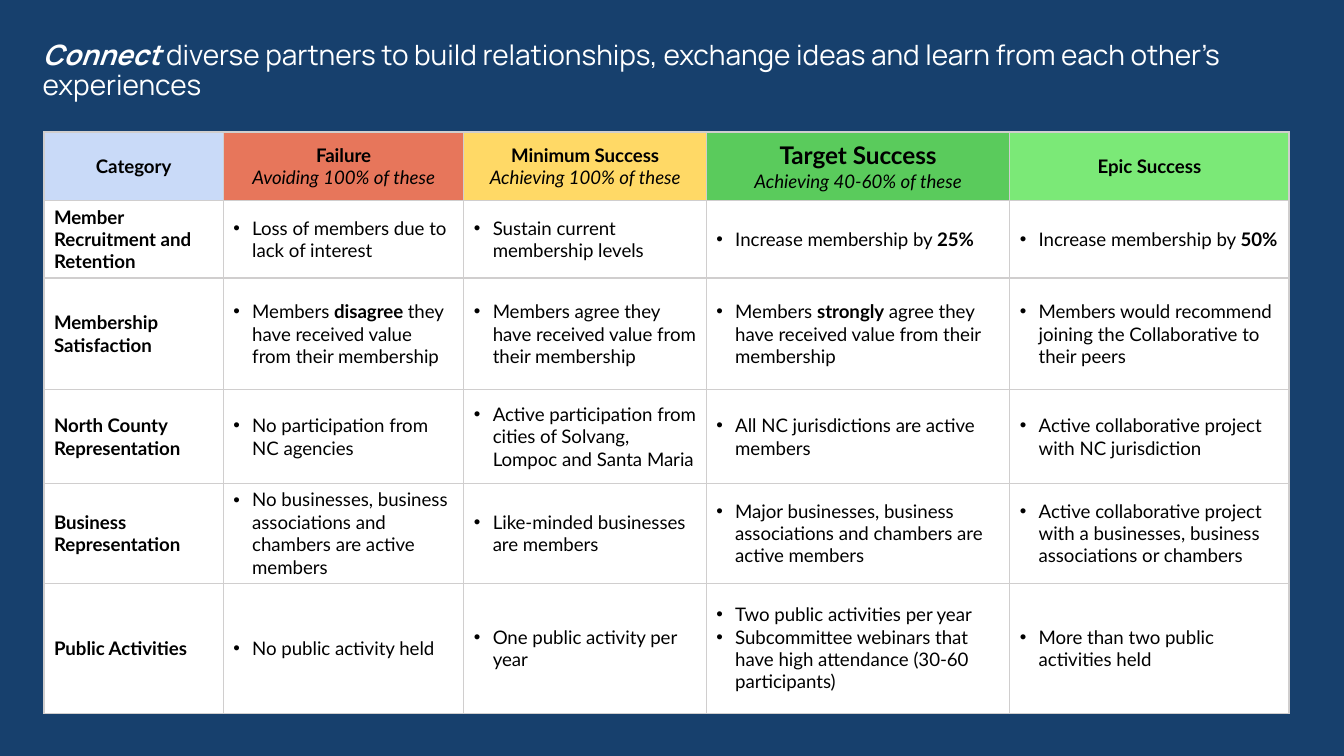
from lxml.etree import SubElement
from pptx import Presentation
from pptx.dml.color import RGBColor
from pptx.enum.text import MSO_ANCHOR, PP_ALIGN
from pptx.oxml.ns import qn
from pptx.util import Emu, Inches, Pt

THEME = {
    "back": "17406D", "light": "FFFFFF", "ink": "000000", "rule": "D0CECE",
    "heads": ["C9DAF8", "E7765B", "FFD966", "5ACB5C", "7BE977"],
    "body": {"name": "Lato", "size": Pt(10)},
    "big": {"name": "Lato", "size": Pt(13)},
    "title": {"name": "Manrope", "size": Pt(15)},
}
WIDE = Inches(10)
HIGH = Emu(WIDE * 9 // 16)
COLS = [13.35, 17.9, 18.04, 22.58, 20.77]
ROWS = [9.1, 10, 14.8, 12.4, 12.8, 17.2]
PAD = {"margin_left": Pt(5.4), "margin_right": Pt(5.4),
       "margin_top": Pt(2.7), "margin_bottom": Pt(2.7)}
CELL = {**PAD, "vertical_anchor": MSO_ANCHOR.MIDDLE}
FRAME = {**PAD, "vertical_anchor": MSO_ANCHOR.TOP, "word_wrap": True}

HEADS = [
    ["Category"],
    ["Failure", "Avoiding 100% of these"],
    ["Minimum Success", "Achieving 100% of these"],
    ["Target Success", "Achieving 40-60% of these"],
    ["Epic Success"],
]
GOALS = [
    ["Member Recruitment and Retention",
     ["Loss of members due to lack of interest"],
     ["Sustain current membership levels"],
     ["Increase membership by *25%* "],
     ["Increase membership by *50%*"]],
    ["Membership Satisfaction",
     ["Members *disagree *they have received value from their membership"],
     ["Members agree they have received value from their membership"],
     ["Members *strongly* agree they have received value from their membership"],
     ["Members would recommend joining the Collaborative to their peers"]],
    ["North County Representation",
     ["No participation from NC agencies"],
     ["Active participation from cities of Solvang, Lompoc and Santa Maria"],
     ["All NC jurisdictions are active members"],
     ["Active collaborative project with NC jurisdiction"]],
    ["Business Representation",
     ["No businesses, business associations and chambers are active members"],
     ["Like-minded businesses are members"],
     ["Major businesses, business associations and chambers are active members"],
     ["Active collaborative project with a businesses, business associations or chambers"]],
    ["Public Activities",
     ["No public activity held"],
     ["One public activity per year"],
     ["Two public activities per year",
      "Subcommittee webinars that have high attendance (30-60 participants)"],
     ["More than two public activities held"]],
]


def across(share):
    return Emu(round(WIDE * share / 100))


def down(share):
    return Emu(round(HIGH * share / 100))


def apply(target, values):
    for name, value in values.items():
        setattr(target, name, value)


def add_run(para, text, style, color="ink", **extra):
    run = para.add_run()
    run.text = text
    apply(run.font, {**THEME[style], "bold": False, "italic": False, **extra})
    run.font.color.rgb = RGBColor.from_string(THEME[color])


def add_paras(frame, count):
    return [frame.paragraphs[0]] + [frame.add_paragraph() for _ in range(count - 1)]


def add_bullet(para):
    props = para._p.get_or_add_pPr()
    props.set("marL", str(Inches(0.14)))
    props.set("indent", str(-Inches(0.14)))
    color = SubElement(props, qn("a:buClr"))
    SubElement(color, qn("a:srgbClr"), val=THEME["ink"])
    SubElement(props, qn("a:buFont"), typeface="Arial")
    SubElement(props, qn("a:buChar"), char="•")


def style_cell(cell, color):
    apply(cell, CELL)
    props = cell._tc.get_or_add_tcPr()
    for side in ("lnL", "lnR", "lnT", "lnB"):
        line = SubElement(props, qn("a:" + side), w=str(Pt(0.75)))
        fill = SubElement(line, qn("a:solidFill"))
        SubElement(fill, qn("a:srgbClr"), val=THEME["rule"])
    cell.fill.solid()
    cell.fill.fore_color.rgb = RGBColor.from_string(color)


def fill_head(cell, lines, color):
    style_cell(cell, color)
    for spot, para in enumerate(add_paras(cell.text_frame, len(lines))):
        para.alignment = PP_ALIGN.CENTER
        style = "big" if lines[spot] == "Target Success" else "body"
        add_run(para, lines[spot], style, bold=spot == 0, italic=spot > 0)


def fill_name(cell, text):
    style_cell(cell, THEME["light"])
    add_run(cell.text_frame.paragraphs[0], text, "body", bold=True)


def fill_goal(cell, items):
    style_cell(cell, THEME["light"])
    for para, item in zip(add_paras(cell.text_frame, len(items)), items):
        add_bullet(para)
        for spot, part in enumerate(item.split("*")):
            if part:
                add_run(para, part, "body", bold=spot % 2 == 1)


def add_grid(slide):
    table = slide.shapes.add_table(
        len(ROWS), len(COLS), across(3.27), down(17.45),
        across(sum(COLS)), down(sum(ROWS))).table
    apply(table, {"first_row": False, "horz_banding": False})
    for col, share in zip(table.columns, COLS):
        col.width = across(share)
    for row, share in zip(table.rows, ROWS):
        row.height = down(share)
    for col, (lines, color) in enumerate(zip(HEADS, THEME["heads"])):
        fill_head(table.cell(0, col), lines, color)
    for row, (name, *goals) in enumerate(GOALS, 1):
        fill_name(table.cell(row, 0), name)
        for col, items in enumerate(goals, 1):
            fill_goal(table.cell(row, col), items)


def add_title(slide):
    box = slide.shapes.add_textbox(across(2.43), down(4.85), across(96.4), down(14.8))
    apply(box.text_frame, FRAME)
    para = box.text_frame.paragraphs[0]
    para.line_spacing = 0.89
    add_run(para, "Connect ", "title", "light", bold=True, italic=True)
    add_run(para, "diverse partners to build relationships, exchange ideas "
            "and learn from each other’s experiences", "title", "light")


def main():
    deck = Presentation()
    apply(deck, {"slide_width": WIDE, "slide_height": HIGH})
    slide = deck.slides.add_slide(deck.slide_layouts[6])
    slide.background.fill.solid()
    slide.background.fill.fore_color.rgb = RGBColor.from_string(THEME["back"])
    add_grid(slide)
    add_title(slide)
    deck.save("out.pptx")


if __name__ == "__main__":
    main()
